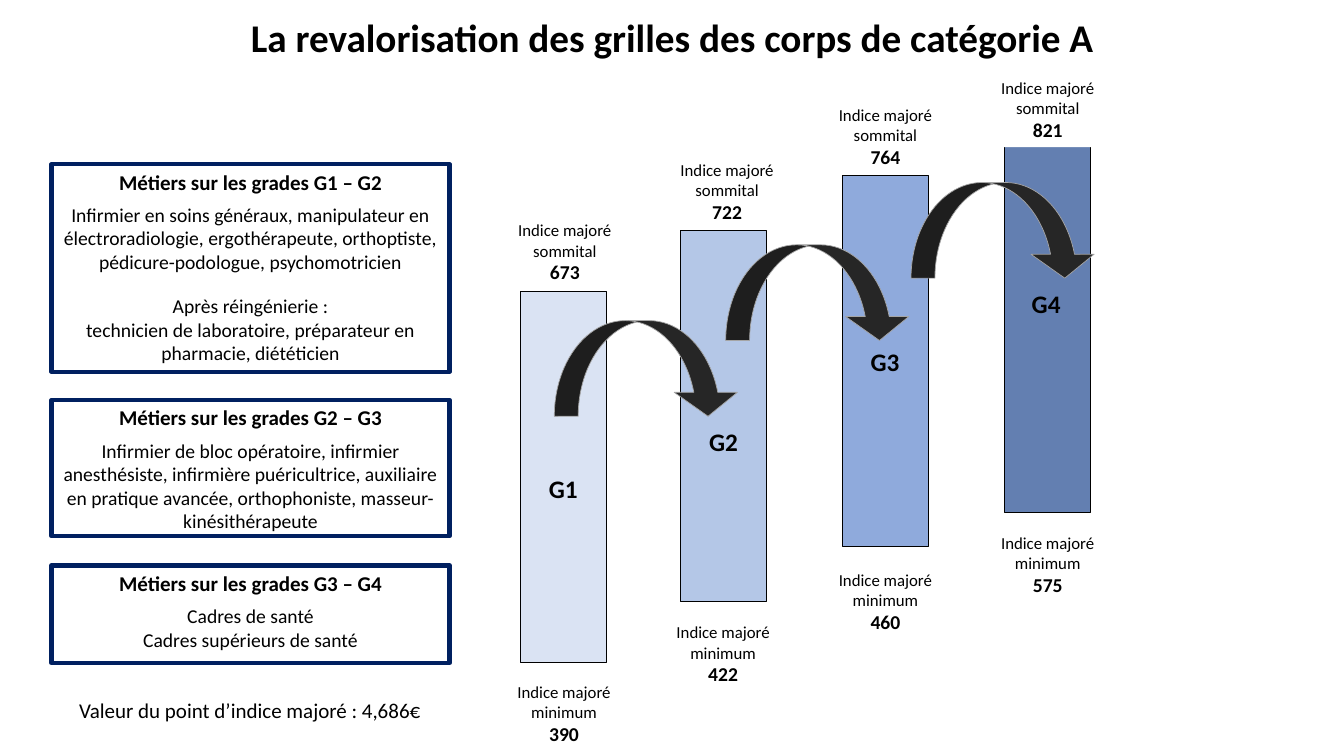
import pptx
import pptx.util
import pptx.dml.color
import pptx.enum.shapes
import pptx.enum.text
import pptx.oxml.ns
from lxml import etree
from pptx.util import Cm, Pt

COLORS = {
    "text": "000000", "paper": "FFFFFF", "frame": "002060",
    "arrow": "262626", "arrow_edge": "A5A5A5",
    "G1": "DAE3F3", "G2": "B4C7E7", "G3": "8FAADC", "G4": "2F5597",
}
SHAPES = pptx.enum.shapes.MSO_SHAPE
ANCHOR = pptx.enum.text.MSO_ANCHOR
TIGHT = {f"margin_{side}": Cm(0.13) for side in ("left", "top", "right", "bottom")}
MIDDLE = {"vertical_anchor": ANCHOR.MIDDLE}

# name, bar (left, top), name (left, top), top index (left, top, value),
# minimum index (left, top, value), opacity in percent
GRADES = [
    ("G1", (13.13, 7.34), (13.61, 12.04), (12.47, 5.41, "673"), (12.45, 17.04, "390"), 100),
    ("G2", (17.15, 5.82), (17.65, 10.85), (16.56, 3.89, "722"), (16.46, 15.54, "422"), 100),
    ("G3", (21.23, 4.42), (21.72, 8.84), (20.55, 2.51, "764"), (20.55, 14.22, "460"), 100),
    ("G4", (25.32, 3.56), (25.78, 7.39), (24.64, 1.83, "821"), (24.64, 13.28, "575"), 75),
]
ARROWS = [(13.97, 8.08), (18.29, 6.17), (22.96, 4.6)]

# top, height, grades, paragraphs with the space before each
JOBS = [
    (4.14, 5.23, "G1 – G2", [
        ("Infirmier en soins généraux, manipulateur en électroradiologie, "
         "ergothérapeute, orthoptiste, pédicure-podologue, psychomotricien", 0),
        ("Après réingénierie :", 14.65),
        ("technicien de laboratoire, préparateur en pharmacie, diététicien", 0)]),
    (10.08, 3.43, "G2 – G3", [
        ("Infirmier de bloc opératoire, infirmier anesthésiste, infirmière "
         "puéricultrice, auxiliaire en pratique avancée, orthophoniste, "
         "masseur-kinésithérapeute", 0)]),
    (14.25, 2.46, "G3 – G4", [
        ("Cadres de santé", 0), ("Cadres supérieurs de santé", 0)]),
]


def rgb(name):
    return pptx.dml.color.RGBColor.from_string(COLORS[name])


def line(text, size, bold=False, before=0, after=0):
    """Describe one paragraph: its text, font values and spacing values."""
    return (text, {"size": Pt(size), "bold": bold},
            {"space_before": Pt(before), "space_after": Pt(after)})


def set_values(target, values):
    for name, value in values.items():
        setattr(target, name, value)


class Deck:
    font = "Calibri"

    def __init__(self):
        self.prs = pptx.Presentation()
        self.prs.slide_width, self.prs.slide_height = Cm(33.87), Cm(19.05)
        self.s = self.prs.slides.add_slide(self.prs.slide_layouts[6])

    def shape(self, kind, at, fill, edge=None, width=0, opacity=100):
        sp = self.s.shapes.add_shape(kind, *map(Cm, at))
        sp.shadow.inherit = False
        sp.fill.solid()
        sp.fill.fore_color.rgb = rgb(fill)
        if opacity < 100:
            color = sp.element.spPr.find(".//" + pptx.oxml.ns.qn("a:srgbClr"))
            alpha = etree.SubElement(color, pptx.oxml.ns.qn("a:alpha"))
            alpha.set("val", str(opacity * 1000))
        if edge:
            sp.line.color.rgb = rgb(edge)
            sp.line.width = Pt(width)
        else:
            sp.line.fill.background()
        return sp

    def put_lines(self, sp, lines, frame):
        tf = sp.text_frame
        set_values(tf, {"word_wrap": True, **frame})
        for i, (text, font, spacing) in enumerate(lines):
            p = tf.paragraphs[0] if i == 0 else tf.add_paragraph()
            set_values(p, {"alignment": pptx.enum.text.PP_ALIGN.CENTER, **spacing})
            r = p.add_run()
            r.text = text
            set_values(r.font, {"name": self.font, **font})
            r.font.color.rgb = rgb("text")

    def panel(self, at, lines, frame, edge=None, width=0):
        """Add a white rectangle with text."""
        sp = self.shape(SHAPES.RECTANGLE, at, "paper", edge, width)
        self.put_lines(sp, lines, frame)

    def text(self, at, lines, frame):
        self.put_lines(self.s.shapes.add_textbox(*map(Cm, at)), lines, frame)

    def bar(self, at, grade, opacity):
        self.shape(SHAPES.RECTANGLE, at, grade, "text", 0.75, opacity)

    def arrow(self, at):
        sp = self.shape(SHAPES.CURVED_DOWN_ARROW, at, "arrow", "arrow_edge", 0.5)
        for i, value in enumerate((0.25, 0.66, 0.25)):
            sp.adjustments[i] = value

    def index(self, place, level):
        left, top, value = place
        self.panel((left, top, 3.53, 1.88),
                   [line(f"Indice majoré {level}", 12), line(value, 14, True)],
                   {**MIDDLE, **TIGHT})


def main():
    deck = Deck()
    deck.panel((4.55, 0.28, 24.77, 1.3),
               [line("La revalorisation des grilles des corps de catégorie A", 28, True)],
               MIDDLE)
    for grade, bar, name, _, _, opacity in GRADES:
        deck.bar((*bar, 2.16, 9.35), grade, opacity)
        deck.text((*name, 1.17, 0.53), [line(grade, 18, True)], {**MIDDLE, **TIGHT})
    for top, height, grades, jobs in JOBS:
        lines = [line(f"Métiers sur les grades {grades}", 15, True, after=6)]
        lines += [line(job, 14, before=gap) for job, gap in jobs]
        deck.panel((1.3, top, 10.03, height), lines,
                   {"vertical_anchor": ANCHOR.TOP}, "frame", 3)
    for place in ARROWS:
        deck.arrow((*place, 4.67, 2.41))
    for _, _, _, highest, lowest, _ in GRADES:
        deck.index(lowest, "minimum")
        deck.index(highest, "sommital")
    deck.text((1.27, 17.45, 10.06, 0.89),
              [line("Valeur du point d’indice majoré : 4,686€", 15)],
              {"auto_size": pptx.enum.text.MSO_AUTO_SIZE.SHAPE_TO_FIT_TEXT})
    deck.prs.save("out.pptx")


if __name__ == "__main__":
    main()
